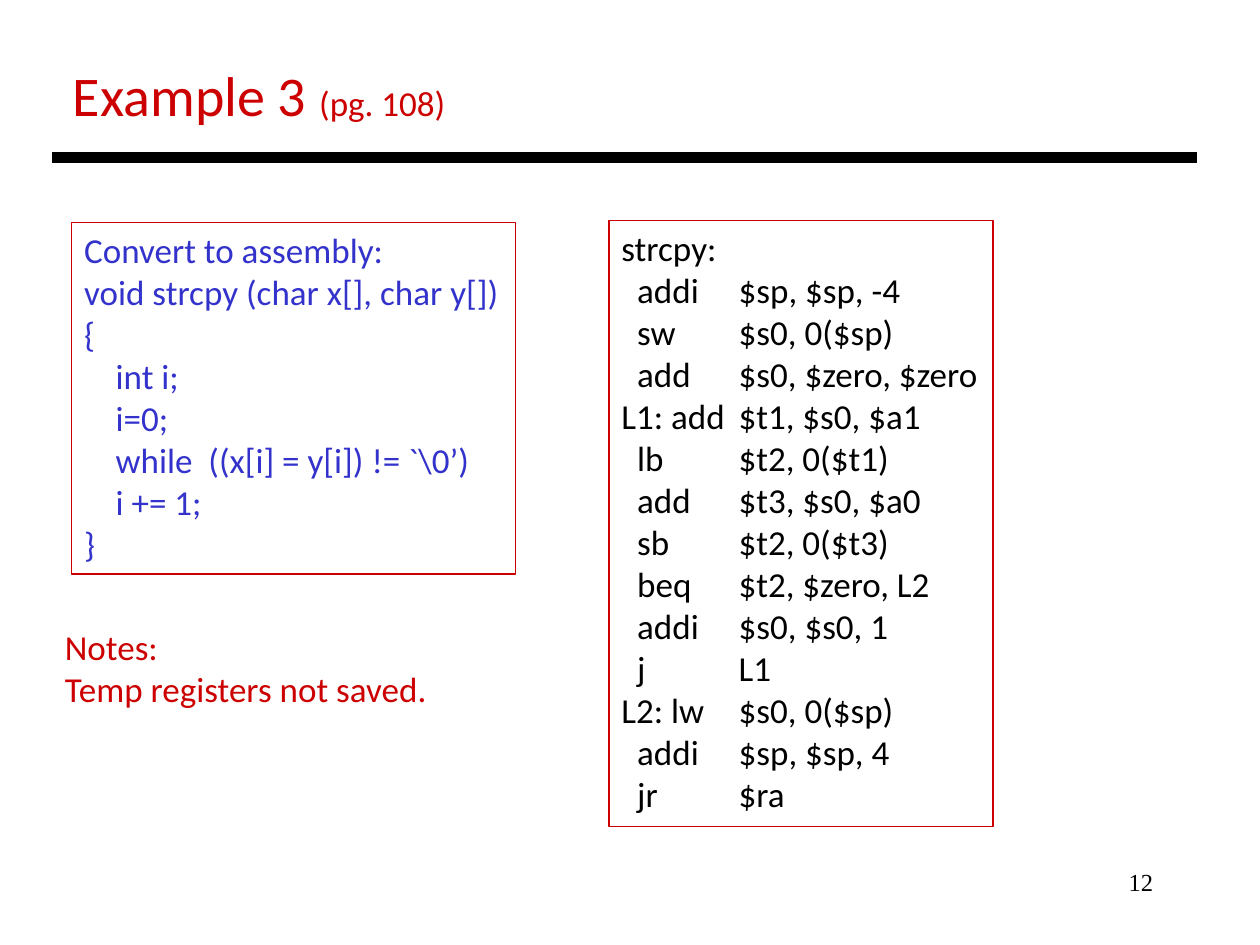
from lxml import etree
from pptx import Presentation
from pptx import util as u
from pptx.dml import color
from pptx.enum import shapes, text
from pptx.oxml import ns

COLORS = {"red": "CC0000", "blue": "3333CC", "black": "000000"}

C_CODE = [
    "Convert to assembly:",
    "void strcpy (char x[], char y[])",
    "{",
    "\tint i;",
    "\ti=0;",
    "\twhile  ((x[i] = y[i]) != `\\0’)",
    "\ti += 1;",
    "}",
]
ASSEMBLY = [
    "strcpy:",
    "\taddi\t$sp, $sp, -4",
    "\tsw\t$s0, 0($sp)",
    "\tadd\t$s0, $zero, $zero",
    "L1: add\t$t1, $s0, $a1",
    "\tlb\t$t2, 0($t1)",
    "\tadd\t$t3, $s0, $a0",
    "\tsb\t$t2, 0($t3)",
    "\tbeq\t$t2, $zero, L2",
    "\taddi\t$s0, $s0, 1",
    "\tj\tL1",
    "L2: lw\t$s0, 0($sp)",
    "\taddi\t$sp, $sp, 4",
    "\tjr\t$ra",
]


def rgb(name):
    """Return a named colour."""
    return color.RGBColor.from_string(COLORS[name])


def set_tabs(para, stops):
    """Give a paragraph left tab stops, in points."""
    tabs = etree.SubElement(para._p.get_or_add_pPr(), ns.qn("a:tabLst"))
    for stop in stops:
        etree.SubElement(tabs, ns.qn("a:tab"), pos=str(u.Pt(stop)), algn="l")


def fill_text(box, lines, ink, size=20, font="Calibri", align=text.PP_ALIGN.LEFT, stops=()):
    """Write one paragraph per line into a shape."""
    frame = box.text_frame
    frame.word_wrap = True
    frame.vertical_anchor = text.MSO_ANCHOR.TOP
    for index, line in enumerate(lines):
        para = frame.add_paragraph() if index else frame.paragraphs[0]
        para.add_run().text = line
        para.alignment = align
        para.font.size = u.Pt(size)
        para.font.name = font
        para.font.color.rgb = rgb(ink)
        if stops:
            set_tabs(para, stops)


def add_label(page, bounds, lines, ink, **style):
    """Add a plain text box."""
    box = page.shapes.add_textbox(*map(u.Pt, bounds))
    fill_text(box, lines, ink, **style)
    return box


def add_code(page, bounds, lines, ink, stops):
    """Add a red-framed code listing."""
    box = page.shapes.add_shape(shapes.MSO_SHAPE.RECTANGLE, *map(u.Pt, bounds))
    box.shadow.inherit = False
    box.fill.background()
    box.line.color.rgb = rgb("red")
    box.line.width = u.Pt(0.75)
    fill_text(box, lines, ink, stops=stops)


def add_title(page):
    """Add the title with its smaller page reference."""
    box = add_label(page, (34.6, 31, 230, 46), ["Example 3 "], "red", size=32)
    span = box.text_frame.paragraphs[0].add_run()
    span.text = "(pg. 108)"
    span.font.size = u.Pt(20)


def add_rule(page, left, right, top):
    """Add the thick rule under the title."""
    rule = page.shapes.add_connector(
        shapes.MSO_CONNECTOR.STRAIGHT, u.Pt(left), u.Pt(top), u.Pt(right), u.Pt(top))
    rule.line.color.rgb = rgb("black")
    rule.line.width = u.Pt(6)
    etree.SubElement(rule._element.spPr, ns.qn("a:effectLst"))


def main():
    """Build the slide and save it."""
    deck = Presentation()
    deck.slide_width, deck.slide_height = u.Pt(720), u.Pt(540)
    page = deck.slides.add_slide(deck.slide_layouts[6])
    add_label(page, (516, 492, 150, 36), ["12"], "black", size=14,
              font="Times New Roman", align=text.PP_ALIGN.RIGHT)
    add_title(page)
    add_rule(page, 30, 684, 90)
    add_code(page, (41, 127, 253.5, 201), C_CODE, "blue", (18,))
    add_code(page, (348, 126, 219.5, 346.5), ASSEMBLY, "black", (9, 67))
    add_label(page, (30, 354, 223, 55.5), ["Notes:", "Temp registers not saved."], "red")
    deck.save("out.pptx")


if __name__ == "__main__":
    main()
